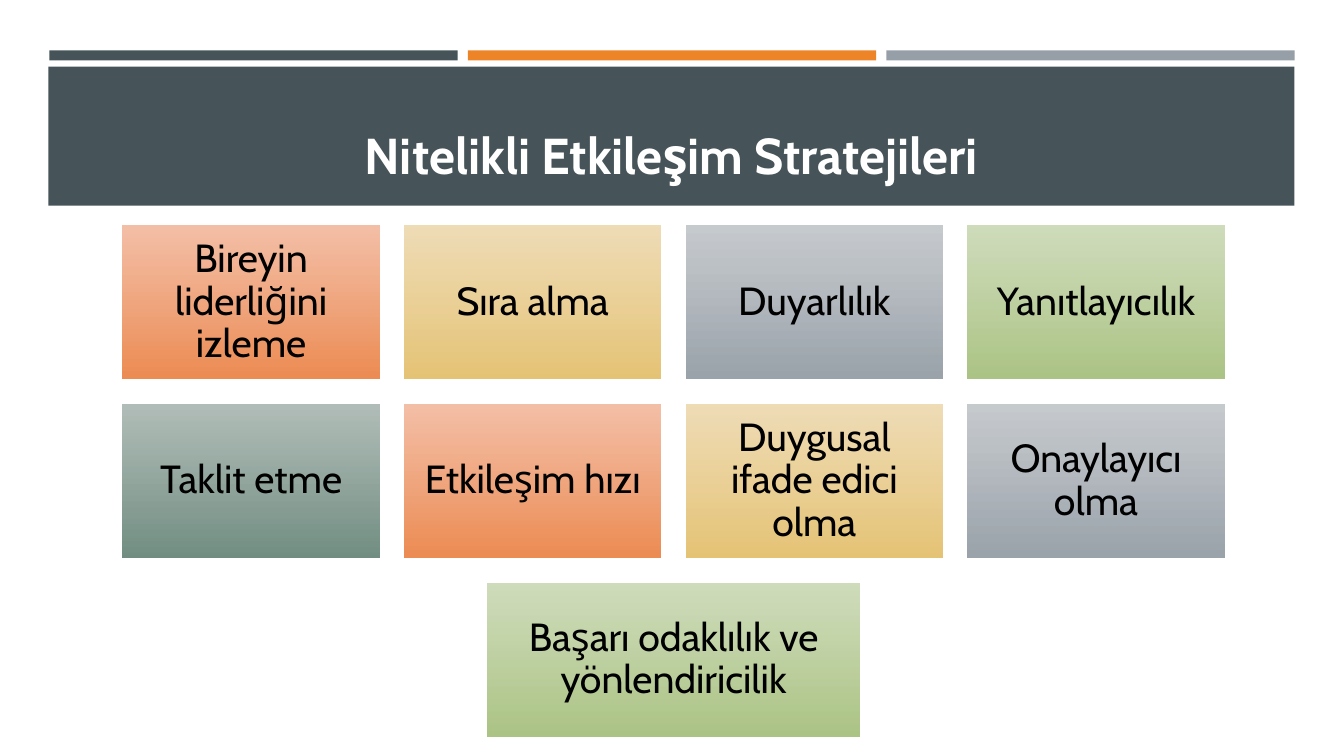
from lxml.etree import SubElement
from pptx import Presentation
from pptx.dml.color import RGBColor
from pptx.enum.shapes import MSO_SHAPE
from pptx.enum.text import MSO_ANCHOR, MSO_AUTO_SIZE, PP_ALIGN
from pptx.oxml.ns import qn
from pptx.util import Emu, Pt

EMU_PER_PX = 9144
FONT = "Cabin"
SLATE = RGBColor(0x46, 0x53, 0x59)
ORANGE = RGBColor(0xED, 0x84, 0x28)
GREY = RGBColor(0x96, 0x9F, 0xA7)
WHITE = RGBColor(0xFF, 0xFF, 0xFF)
BLACK = RGBColor(0x00, 0x00, 0x00)
CARD_GRADIENTS = [
    (RGBColor(0xF3, 0xB8, 0x9D), RGBColor(0xED, 0x8C, 0x53)),
    (RGBColor(0xEE, 0xD9, 0xAE), RGBColor(0xE6, 0xC4, 0x76)),
    (RGBColor(0xC0, 0xC5, 0xC9), RGBColor(0x9B, 0xA3, 0xAB)),
    (RGBColor(0xCA, 0xD9, 0xB4), RGBColor(0xAC, 0xC4, 0x85)),
    (RGBColor(0xA8, 0xB6, 0xB0), RGBColor(0x72, 0x8E, 0x82)),
]
STRATEGY_ROWS = [
    ["Bireyin liderliğini izleme", "Sıra alma", "Duyarlılık", "Yanıtlayıcılık"],
    ["Taklit etme", "Etkileşim hızı", "Duygusal ifade edici olma", "Onaylayıcı olma"],
    ["Başarı odaklılık ve yönlendiricilik"],
]


def px(length):
    return Emu(round(length * EMU_PER_PX))


def add_rectangle(slide, left, top, width, height):
    shape = slide.shapes.add_shape(
        MSO_SHAPE.RECTANGLE, px(left), px(top), px(width), px(height)
    )
    shape.shadow.inherit = False
    shape.line.fill.background()
    return shape


def add_accent_bars(slide, left, top, width, height):
    gap = 10
    bar_width = (width - 2 * gap) / 3
    for column, color in enumerate([SLATE, ORANGE, GREY]):
        bar_left = left + column * (bar_width + gap)
        bar = add_rectangle(slide, bar_left, top, bar_width, height)
        bar.fill.solid()
        bar.fill.fore_color.rgb = color


def add_title_band(slide, text, left, top, width, height):
    band = add_rectangle(slide, left, top, width, height)
    band.fill.solid()
    band.fill.fore_color.rgb = SLATE

    title = slide.shapes.title
    band.element.addnext(title.element)
    title.left, title.top = px(left + 15), px(top + 14)
    title.width, title.height = px(width - 30), px(height - 30)
    frame = title.text_frame
    frame.text = text
    frame.word_wrap = True
    frame.auto_size = MSO_AUTO_SIZE.NONE
    frame.vertical_anchor = MSO_ANCHOR.BOTTOM
    paragraph = frame.paragraphs[0]
    paragraph.alignment = PP_ALIGN.CENTER
    paragraph.font.name = FONT
    paragraph.font.size = Pt(36)
    paragraph.font.bold = True
    paragraph.font.color.rgb = WHITE


def add_card(slide, text, gradient, left, top, width, height):
    card = add_rectangle(slide, left, top, width, height)
    card.fill.gradient()
    card.fill.gradient_angle = 270
    for stop, color in zip(card.fill.gradient_stops, gradient):
        stop.color.rgb = color
    first_color = card.element.spPr.find(".//" + qn("a:srgbClr"))
    SubElement(first_color, qn("a:alpha"), val="90000")

    frame = card.text_frame
    frame.text = text
    frame.word_wrap = True
    frame.vertical_anchor = MSO_ANCHOR.MIDDLE
    frame.margin_left = frame.margin_right = px(12)
    frame.margin_top = frame.margin_bottom = px(12)
    paragraph = frame.paragraphs[0]
    paragraph.alignment = PP_ALIGN.CENTER
    paragraph.line_spacing = 0.9
    paragraph.font.name = FONT
    paragraph.font.size = Pt(28)
    paragraph.font.color.rgb = BLACK


def add_strategy_cards(slide, left, top, width):
    card_width, wide_card_width, card_height = 254, 369, 152
    gap = (width - 4 * card_width) / 3
    card_number = 0
    for row, strategies in enumerate(STRATEGY_ROWS):
        count = len(strategies)
        item_width = wide_card_width if count == 1 else card_width
        row_width = count * item_width + (count - 1) * gap
        row_left = left + (width - row_width) / 2
        for column, strategy in enumerate(strategies):
            add_card(
                slide,
                strategy,
                CARD_GRADIENTS[card_number % len(CARD_GRADIENTS)],
                row_left + column * (item_width + gap),
                top + row * (card_height + gap),
                item_width,
                card_height,
            )
            card_number += 1


def main():
    presentation = Presentation()
    presentation.slide_width = px(1333)
    presentation.slide_height = px(750)
    slide = presentation.slides.add_slide(presentation.slide_layouts[5])
    add_accent_bars(slide, 49, 50, 1235, 10)
    add_title_band(slide, "Nitelikli Etkileşim Stratejileri", 48, 66, 1236, 138)
    add_strategy_cards(slide, 122, 224, 1092)
    presentation.save("out.pptx")


if __name__ == "__main__":
    main()
